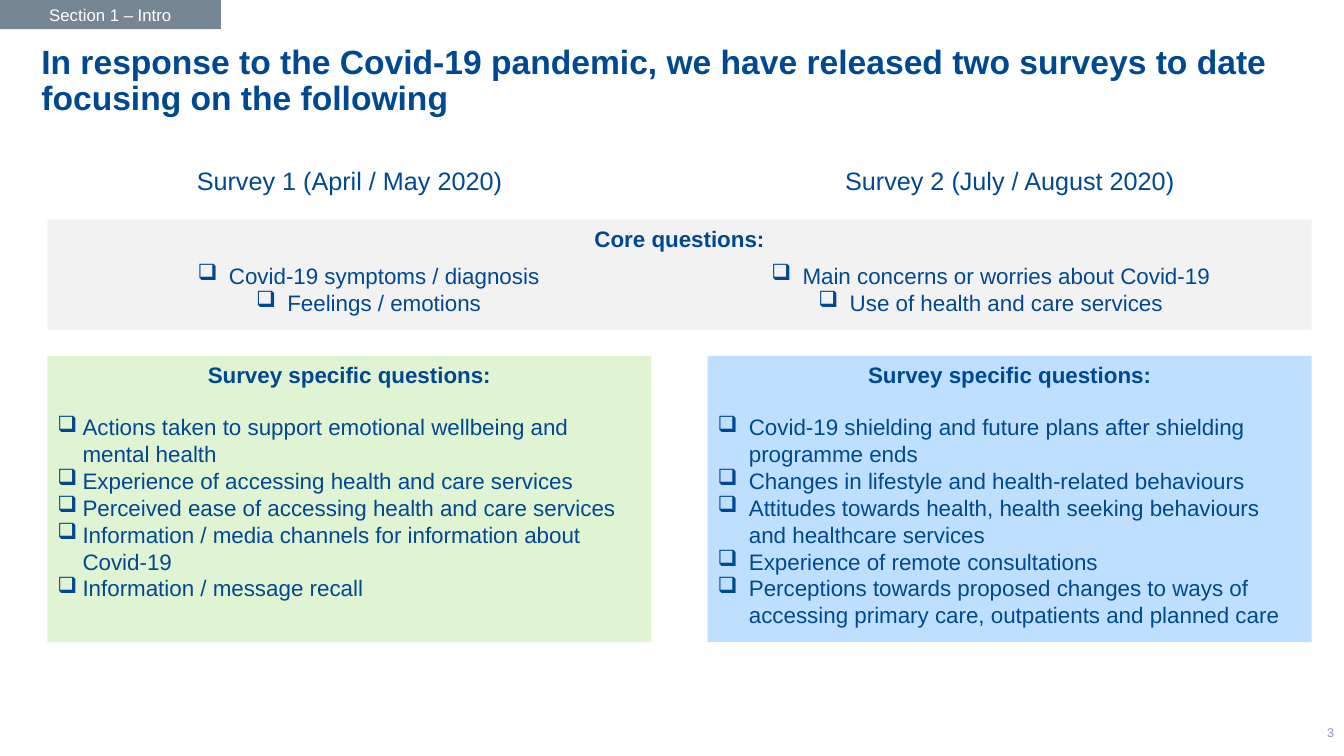
from dataclasses import dataclass

from lxml.etree import SubElement
from pptx import Presentation
from pptx.dml.color import RGBColor
from pptx.enum.shapes import MSO_SHAPE
from pptx.enum.text import MSO_ANCHOR, PP_ALIGN
from pptx.oxml.ns import qn
from pptx.util import Inches, Pt

# Positions and sizes are percentages of the slide
SLIDE_W, SLIDE_H = 13.33, 7.5
MARGIN, CONTENT_W = 3.53, 94.07
PANEL_W = 44.94
PANEL_STEP = CONTENT_W - PANEL_W
HEADING_W = 31.51
CORE_INSET = 0.75
CORE_W = CONTENT_W / 2 - CORE_INSET
NAVY = "004992"


@dataclass
class Box:
    left: float
    top: float
    width: float
    height: float


@dataclass
class Line:
    text: str
    size: float = 16
    bold: bool = False
    color: str = NAVY
    align: PP_ALIGN = PP_ALIGN.CENTER
    indent: float = 0
    before: float = 0
    spacing: float = 1


@dataclass
class Survey:
    heading: str
    fill: str
    indent: float
    core: list[str]
    specific: list[str]


SURVEYS = [
    Survey(
        "Survey 1 (April / May 2020)", "E0F3D2", 0.25,
        ["Covid-19 symptoms / diagnosis", "Feelings / emotions"],
        ["Actions taken to support emotional wellbeing and mental health",
         "Experience of accessing health and care services",
         "Perceived ease of accessing health and care services",
         "Information / media channels for information about Covid-19",
         "Information / message recall"],
    ),
    Survey(
        "Survey 2 (July / August 2020)", "BEDFFF", 0.31,
        ["Main concerns or worries about Covid-19",
         "Use of health and care services"],
        ["Covid-19 shielding and future plans after shielding programme ends",
         "Changes in lifestyle and health-related behaviours",
         "Attitudes towards health, health seeking behaviours and healthcare services",
         "Experience of remote consultations",
         "Perceptions towards proposed changes to ways of accessing primary care, "
         "outpatients and planned care"],
    ),
]


def rgb(hex_color: str) -> RGBColor:
    return RGBColor.from_string(hex_color)


def apply(target, values: dict) -> None:
    for name, value in values.items():
        setattr(target, name, value)


def write(frame, lines: list[Line], anchor=MSO_ANCHOR.TOP, side: float = 0.1) -> None:
    apply(frame, {"word_wrap": True, "vertical_anchor": anchor,
                  "margin_left": Inches(side), "margin_right": Inches(side)})
    for index, line in enumerate(lines):
        paragraph = frame.paragraphs[0] if index == 0 else frame.add_paragraph()
        if line.indent:
            properties = paragraph._p.get_or_add_pPr()
            properties.set("marL", str(Inches(line.indent)))
            properties.set("indent", str(-Inches(line.indent)))
            SubElement(properties, qn("a:buChar")).set("char", "❑")
        apply(paragraph, {"alignment": line.align, "line_spacing": line.spacing,
                          "space_before": Pt(line.before)})
        run = paragraph.add_run()
        run.text = line.text
        apply(run.font, {"name": "Arial", "size": Pt(line.size), "bold": line.bold})
        run.font.color.rgb = rgb(line.color)


def place(box: Box) -> tuple:
    return (Inches(box.left * SLIDE_W / 100), Inches(box.top * SLIDE_H / 100),
            Inches(box.width * SLIDE_W / 100), Inches(box.height * SLIDE_H / 100))


def add_text(slide, box: Box, lines: list[Line], **layout) -> None:
    write(slide.shapes.add_textbox(*place(box)).text_frame, lines, **layout)


def add_panel(slide, box: Box, fill: str, lines: list[Line], **layout) -> None:
    panel = slide.shapes.add_shape(MSO_SHAPE.RECTANGLE, *place(box))
    panel.shadow.inherit = False
    panel.fill.solid()
    panel.fill.fore_color.rgb = rgb(fill)
    panel.line.fill.background()
    write(panel.text_frame, lines, **layout)


def main() -> None:
    prs = Presentation()
    prs.slide_width, prs.slide_height = Inches(SLIDE_W), Inches(SLIDE_H)
    slide = prs.slides.add_slide(prs.slide_layouts[6])

    # Section tag, title and page number
    add_panel(slide, Box(0, 0, 16.43, 3.87), "768692",
              [Line("Section 1 – Intro", 12, color="FFFFFF")], anchor=MSO_ANCHOR.MIDDLE)
    add_text(slide, Box(1.28, 5.33, 96.32, 15.07),
             [Line("In response to the Covid-19 pandemic, we have released two surveys "
                   "to date focusing on the following",
                   24, True, align=PP_ALIGN.LEFT, spacing=0.9)], side=0.24)
    add_text(slide, Box(77.5, 94.27, 22.5, 5.33),
             [Line("3", 9, color="8C95B6", align=PP_ALIGN.RIGHT)],
             anchor=MSO_ANCHOR.MIDDLE)

    # Band of questions shared by both surveys
    add_panel(slide, Box(MARGIN, 29.07, CONTENT_W, 14.53), "F2F2F2",
              [Line("Core questions:", bold=True)])

    # One column per survey
    for index, survey in enumerate(SURVEYS):
        left = MARGIN + index * PANEL_STEP
        add_text(slide, Box(left + (PANEL_W - HEADING_W) / 2, 21.2, HEADING_W, 5.33),
                 [Line(survey.heading, 18)])
        add_text(slide, Box(MARGIN + CORE_INSET + index * CORE_W, 34, CORE_W, 8.5),
                 [Line(text, indent=0.31) for text in survey.core], side=0)
        questions = [Line(text, align=PP_ALIGN.LEFT, indent=survey.indent,
                          before=0 if number else 18.4)
                     for number, text in enumerate(survey.specific)]
        add_panel(slide, Box(left, 47.07, PANEL_W, 37.87), survey.fill,
                  [Line("Survey specific questions:", bold=True), *questions])

    prs.save("out.pptx")


if __name__ == "__main__":
    main()
